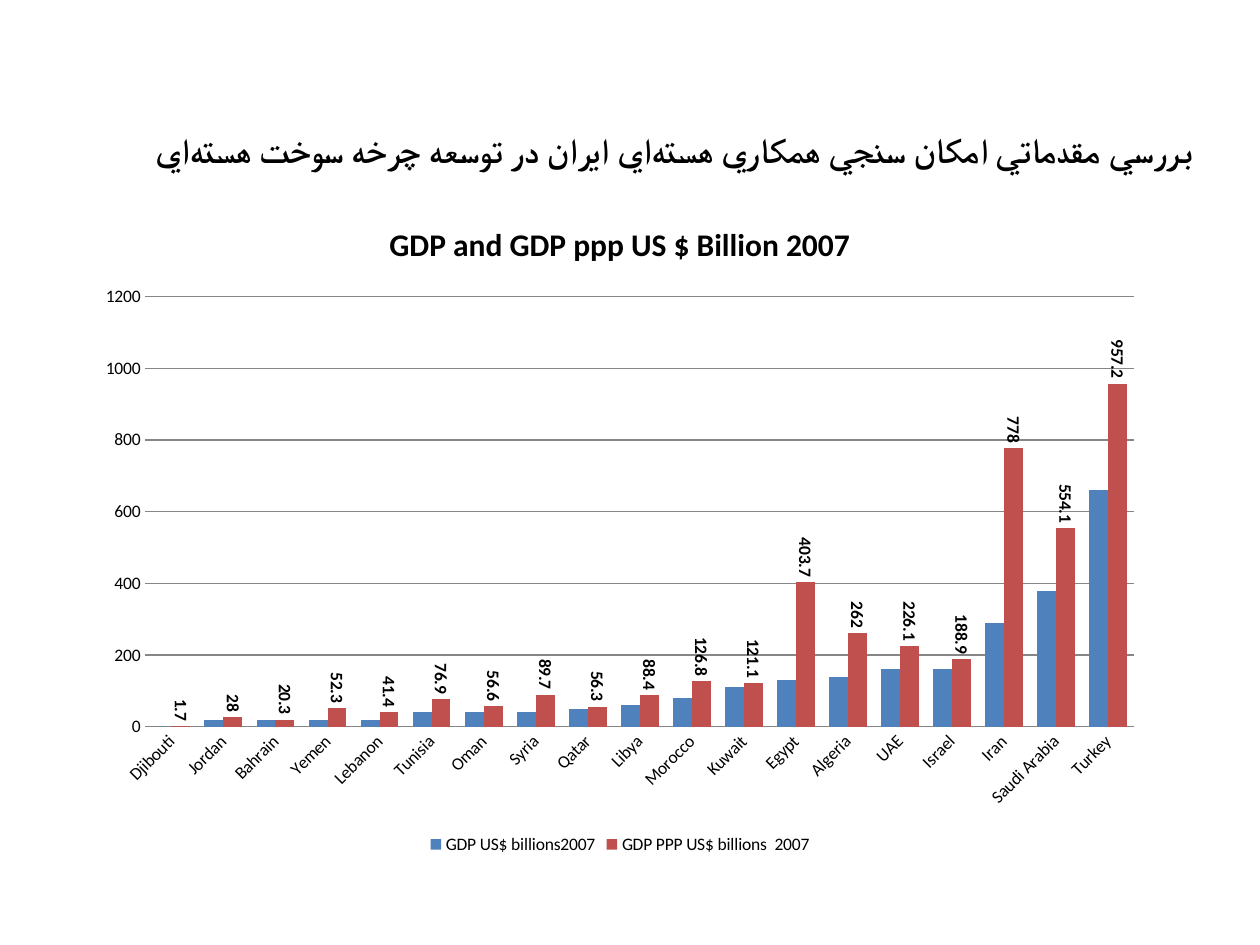
from pptx import Presentation
from pptx.chart.data import CategoryChartData
from pptx.dml.color import RGBColor
from pptx.enum.chart import XL_CHART_TYPE, XL_LABEL_POSITION, XL_LEGEND_POSITION, XL_TICK_MARK
from pptx.enum.text import MSO_ANCHOR, MSO_AUTO_SIZE, PP_ALIGN
from pptx.oxml.ns import qn
from pptx.util import Inches, Pt

CLUSTERED = XL_CHART_TYPE.COLUMN_CLUSTERED
OUTSIDE_END = XL_LABEL_POSITION.OUTSIDE_END
BOTTOM = XL_LEGEND_POSITION.BOTTOM
NO_TICK = XL_TICK_MARK.NONE
MIDDLE = MSO_ANCHOR.MIDDLE
NO_AUTOFIT = MSO_AUTO_SIZE.NONE
CENTER = PP_ALIGN.CENTER

FONT = "Calibri"
COLORS = {"text": "000000", "grid": "868686", "gdp": "4F81BD", "ppp": "C0504D"}
NON_JOINER = chr(0x200C)
NUCLEAR = NON_JOINER.join(("هسته", "اي"))
HEADING = f"بررسي مقدماتي امکان سنجي همکاري {NUCLEAR} ايران در توسعه چرخه سوخت {NUCLEAR}"
CHART_TITLE = "GDP and GDP ppp US $ Billion 2007"
GDP_NAME = "GDP US$ billions2007"
PPP_NAME = "GDP PPP US$ billions  2007"
ECONOMIES = [
    ("Djibouti", 0, 1.7),
    ("Jordan", 20, 28),
    ("Bahrain", 20, 20.3),
    ("Yemen", 20, 52.3),
    ("Lebanon", 20, 41.4),
    ("Tunisia", 40, 76.9),
    ("Oman", 40, 56.6),
    ("Syria", 40, 89.7),
    ("Qatar", 50, 56.3),
    ("Libya", 60, 88.4),
    ("Morocco", 80, 126.8),
    ("Kuwait", 110, 121.1),
    ("Egypt", 130, 403.7),
    ("Algeria", 140, 262),
    ("UAE", 160, 226.1),
    ("Israel", 160, 188.9),
    ("Iran", 290, 778),
    ("Saudi Arabia", 380, 554.1),
    ("Turkey", 660, 957.2),
]


def color(name):
    """Return the named palette colour."""
    return RGBColor.from_string(COLORS[name])


def style_font(font, size, bold=False):
    """Apply the slide's typeface and text colour."""
    font.name = FONT
    font.size = Pt(size)
    font.bold = bold
    font.color.rgb = color("text")


def rotate_text(element, degrees):
    """Turn the text of a chart element clockwise."""
    body = element.find(qn("c:txPr")).find(qn("a:bodyPr"))
    body.set("rot", str(degrees * 60000))
    body.set("vert", "horz")


def add_heading(slide):
    """Place the right-to-left slide title."""
    heading = slide.shapes.title
    heading.left, heading.top = Inches(0.7), Inches(1.09)
    heading.width, heading.height = Inches(9.3), Inches(0.55)
    frame = heading.text_frame
    frame.text = HEADING
    frame.word_wrap = True
    frame.auto_size = NO_AUTOFIT
    frame.vertical_anchor = MIDDLE
    frame.margin_bottom = Inches(0.35)
    paragraph = frame.paragraphs[0]
    paragraph.alignment = CENTER
    paragraph.line_spacing = 0.8
    paragraph.space_before = Pt(0)
    paragraph._p.get_or_add_pPr().set("rtl", "1")
    run = paragraph.runs[0]
    style_font(run.font, 20, bold=True)
    run_properties = run._r.get_or_add_rPr()
    run_properties.append(run_properties.makeelement(qn("a:cs"), {"typeface": FONT}))


def style_axes(chart):
    """Format both axes and the horizontal gridlines."""
    for axis in (chart.category_axis, chart.value_axis):
        axis.major_tick_mark = NO_TICK
        axis.minor_tick_mark = NO_TICK
        style_font(axis.tick_labels.font, 10)
    countries, billions = chart.category_axis, chart.value_axis
    countries.format.line.color.rgb = color("grid")
    rotate_text(countries._element, -45)
    billions.minimum_scale, billions.maximum_scale = 0, 1200
    billions.major_unit = 200
    billions.format.line.fill.background()
    billions.major_gridlines.format.line.color.rgb = color("grid")
    billions.major_gridlines.format.line.width = Pt(0.75)


def label_series(series):
    """Show upright bold values above the columns."""
    labels = series.data_labels
    labels.show_value = True
    labels.position = OUTSIDE_END
    style_font(labels.font, 10, bold=True)
    rotate_text(labels._element, 90)


def add_gdp_chart(slide):
    """Add the clustered columns of GDP and GDP at purchasing power parity."""
    countries, gdp, ppp = zip(*ECONOMIES)
    data = CategoryChartData()
    data.categories = countries
    data.add_series(GDP_NAME, gdp)
    data.add_series(PPP_NAME, ppp)
    chart = slide.shapes.add_chart(
        CLUSTERED, Inches(0.67), Inches(1.56), Inches(8.5), Inches(5.26), data
    ).chart
    style_font(chart.font, 10)
    chart.has_title = True
    chart.chart_title.text_frame.text = CHART_TITLE
    style_font(chart.chart_title.text_frame.paragraphs[0].runs[0].font, 18, bold=True)
    chart.chart_title.include_in_layout = False
    chart.has_legend = True
    chart.legend.position = BOTTOM
    chart.legend.include_in_layout = False
    style_font(chart.legend.font, 10)
    style_axes(chart)
    plot = chart.plots[0]
    plot.gap_width = 75
    plot.overlap = 0
    plot.vary_by_categories = False
    for series, name in zip(plot.series, ("gdp", "ppp")):
        series.format.fill.solid()
        series.format.fill.fore_color.rgb = color(name)
        series.invert_if_negative = False
    label_series(plot.series[1])


def main():
    """Build and save the slide."""
    deck = Presentation()
    deck.slide_width, deck.slide_height = Inches(10), Inches(7.5)
    slide = deck.slides.add_slide(deck.slide_layouts[5])
    add_gdp_chart(slide)
    add_heading(slide)
    deck.save("out.pptx")


if __name__ == "__main__":
    main()
